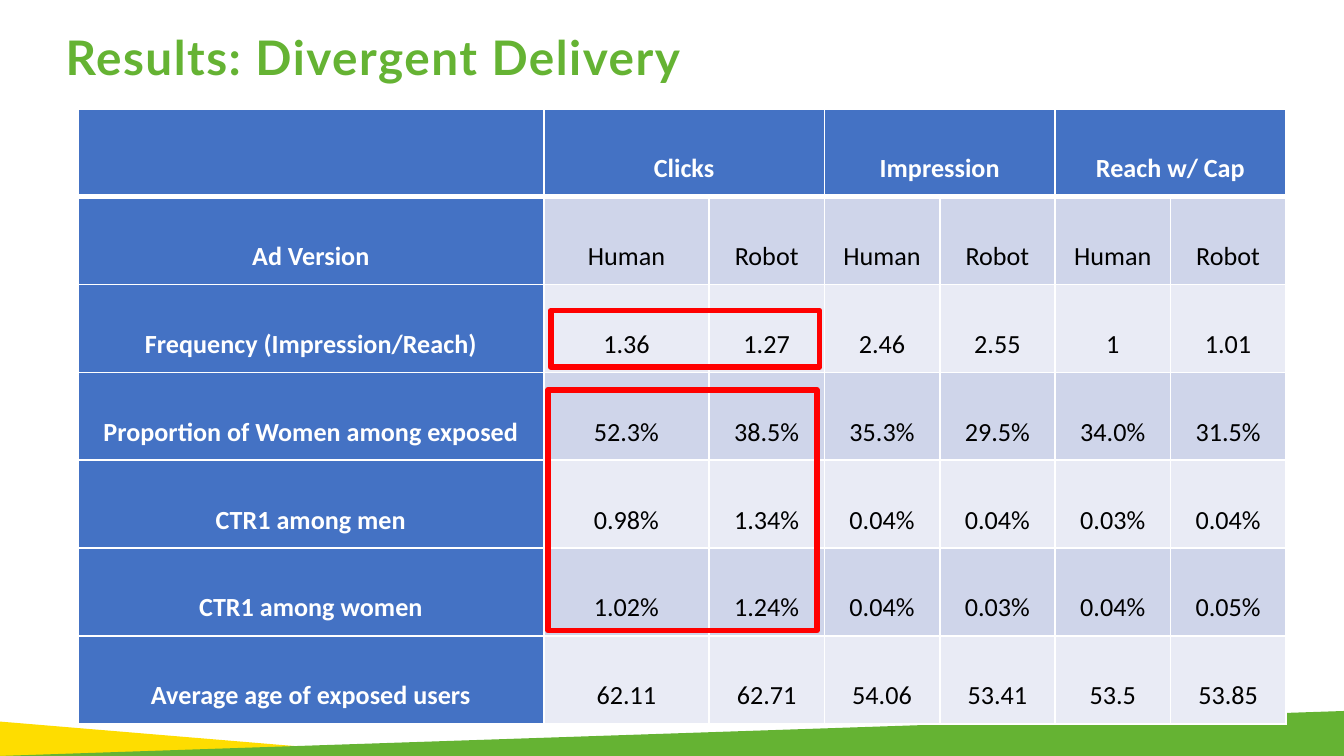
from lxml import etree
from pptx import Presentation
from pptx.dml.color import RGBColor
from pptx.enum.shapes import MSO_SHAPE
from pptx.enum.text import MSO_ANCHOR, PP_ALIGN
from pptx.oxml.ns import qn
from pptx.util import Cm, Pt

RECTANGLE = MSO_SHAPE.RECTANGLE
MIDDLE = MSO_ANCHOR.MIDDLE
TOP = MSO_ANCHOR.TOP
CENTER = PP_ALIGN.CENTER

COLORS = {
    "green": "65B333",
    "yellow": "FEDD00",
    "header": "4472C4",
    "band_dark": "CFD5EA",
    "band_light": "E9EBF5",
    "highlight": "FF0000",
    "white": "FFFFFF",
    "black": "000000",
}

SLIDE_WIDTH, SLIDE_HEIGHT = 25.4, 14.29

# Corner points of the bottom wedges, in cm
WEDGES = [
    ("yellow", [(0, 13.64), (7.82, SLIDE_HEIGHT), (0, SLIDE_HEIGHT)]),
    ("green", [(SLIDE_WIDTH, 13.44), (0, SLIDE_HEIGHT), (SLIDE_WIDTH, SLIDE_HEIGHT)]),
]

COLUMN_WIDTHS = [8.81, 3.12] + [2.18] * 5
ROW_HEIGHT = 1.66
GROUPS = ["Clicks", "Impression", "Reach w/ Cap"]
ROWS = [
    ["Ad Version"] + ["Human", "Robot"] * len(GROUPS),
    ["Frequency (Impression/Reach)", "1.36", "1.27", "2.46", "2.55", "1", "1.01"],
    ["Proportion of Women among exposed", "52.3%", "38.5%", "35.3%", "29.5%", "34.0%", "31.5%"],
    ["CTR1 among men", "0.98%", "1.34%", "0.04%", "0.04%", "0.03%", "0.04%"],
    ["CTR1 among women", "1.02%", "1.24%", "0.04%", "0.03%", "0.04%", "0.05%"],
    ["Average age of exposed users", "62.11", "62.71", "54.06", "53.41", "53.5", "53.85"],
]

# Left, top, width, height in cm
HIGHLIGHTS = [(10.36, 7.37, 5.08, 4.55), (10.41, 5.87, 5.08, 1.07)]


def rgb(name):
    return RGBColor.from_string(COLORS[name])


def add_run(paragraph, text, font_name, size, color, bold):
    run = paragraph.add_run()
    run.text = text
    run.font.name = font_name
    run.font.size = Pt(size)
    run.font.bold = bold
    run.font.color.rgb = rgb(color)
    return run


def add_wedge(slide, color, points):
    corners = [(Cm(x), Cm(y)) for x, y in points]
    builder = slide.shapes.build_freeform(*corners[0])
    builder.add_line_segments(corners[1:], close=True)
    shape = builder.convert_to_shape()
    shape.shadow.inherit = False
    shape.fill.solid()
    shape.fill.fore_color.rgb = rgb(color)
    shape.line.fill.background()


def add_title(slide, text):
    box = slide.shapes.add_textbox(Cm(0.99), Cm(0.53), Cm(22.12), Cm(1.52))
    frame = box.text_frame
    frame.word_wrap = True
    frame.vertical_anchor = TOP
    paragraph = frame.paragraphs[0]
    paragraph.line_spacing = 0.9
    paragraph.space_before = Pt(10)
    run = add_run(paragraph, text, "Lato", 25.5, "green", True)
    run.font._element.set("spc", "80")


def set_borders(cell, widths):
    properties = cell._tc.get_or_add_tcPr()
    for side, width in zip("LRTB", widths):
        line = etree.SubElement(properties, qn(f"a:ln{side}"), w=str(Pt(width)))
        fill = etree.SubElement(line, qn("a:solidFill"))
        etree.SubElement(fill, qn("a:srgbClr"), val=COLORS["white"])


def style_cell(cell, row, column):
    # Header row is set off by a thicker rule
    set_borders(cell, (1, 1, 3 if row == 1 else 1, 3 if row == 0 else 1))
    if row == 0 or column == 0:
        color = "header"
    else:
        color = "band_dark" if row % 2 else "band_light"
    cell.fill.solid()
    cell.fill.fore_color.rgb = rgb(color)
    cell.vertical_anchor = MIDDLE
    cell.margin_left = cell.margin_right = Cm(0.18)
    cell.margin_top = cell.margin_bottom = 0


def write_cell(cell, text, is_header):
    paragraph = cell.text_frame.paragraphs[0]
    paragraph.alignment = CENTER
    paragraph.line_spacing = 2.0
    add_run(paragraph, text, "Calibri", 14, "white" if is_header else "black", is_header)


def add_results_table(slide):
    row_count = len(ROWS) + 1
    frame = slide.shapes.add_table(
        row_count, len(COLUMN_WIDTHS), Cm(1.47), Cm(2.06),
        Cm(sum(COLUMN_WIDTHS)), Cm(ROW_HEIGHT * row_count))
    table = frame.table
    for column, width in zip(table.columns, COLUMN_WIDTHS):
        column.width = Cm(width)
    for row_index, row in enumerate(table.rows):
        row.height = Cm(ROW_HEIGHT)
        for column_index, cell in enumerate(row.cells):
            style_cell(cell, row_index, column_index)

    # Each group heading spans two columns
    for index, group in enumerate(GROUPS):
        first = 1 + 2 * index
        heading = table.cell(0, first)
        heading.merge(table.cell(0, first + 1))
        write_cell(heading, group, True)

    for row_index, values in enumerate(ROWS, start=1):
        for column_index, value in enumerate(values):
            write_cell(table.cell(row_index, column_index), value, column_index == 0)


def add_highlight(slide, bounds):
    shape = slide.shapes.add_shape(RECTANGLE, *(Cm(value) for value in bounds))
    shape.shadow.inherit = False
    shape.fill.background()
    shape.line.color.rgb = rgb("highlight")
    shape.line.width = Pt(3)


def main():
    presentation = Presentation()
    presentation.slide_width = Cm(SLIDE_WIDTH)
    presentation.slide_height = Cm(SLIDE_HEIGHT)
    slide = presentation.slides.add_slide(presentation.slide_layouts[6])

    # Bottom decoration
    for color, points in WEDGES:
        add_wedge(slide, color, points)

    # Title and results
    add_title(slide, "Results: Divergent Delivery")
    add_results_table(slide)

    # Frames around the key figures
    for bounds in HIGHLIGHTS:
        add_highlight(slide, bounds)

    presentation.save("out.pptx")


if __name__ == "__main__":
    main()
